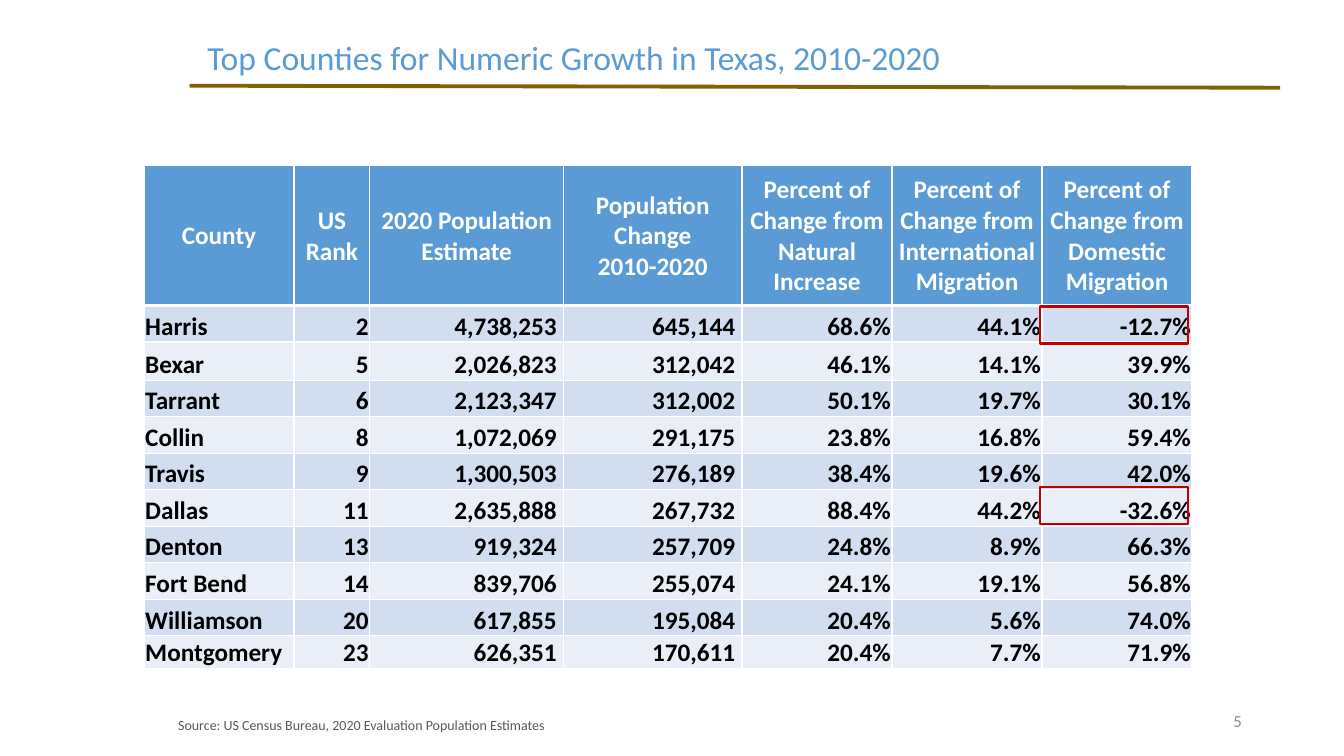
"""Build the slide on Texas counties with the largest numeric growth."""
from lxml import etree
from pptx import Presentation
from pptx.dml.color import RGBColor
from pptx.enum import shapes, text
from pptx.oxml import ns
from pptx.util import Cm, Pt


def rgb(value):
    return RGBColor.from_string(value)


def style(p, size, color, align, bold=False):
    p.alignment = align
    p.font.name = "Calibri"
    p.font.size = Pt(size)
    p.font.bold = bold
    p.font.color.rgb = rgb(color)


LEFT, CENTER, RIGHT = text.PP_ALIGN.LEFT, text.PP_ALIGN.CENTER, text.PP_ALIGN.RIGHT
HEADERS = ["County", "US Rank", "2020 Population Estimate",
           "Population Change\n2010-2020",
           "Percent of Change from Natural Increase",
           "Percent of Change from\nInternational Migration",
           "Percent of Change from Domestic Migration"]
COUNTIES = [
    ("Harris", "2", "4,738,253", "645,144", "68.6%", "44.1%", "-12.7%"),
    ("Bexar", "5", "2,026,823", "312,042", "46.1%", "14.1%", "39.9%"),
    ("Tarrant", "6", "2,123,347", "312,002", "50.1%", "19.7%", "30.1%"),
    ("Collin", "8", "1,072,069", "291,175", "23.8%", "16.8%", "59.4%"),
    ("Travis", "9", "1,300,503", "276,189", "38.4%", "19.6%", "42.0%"),
    ("Dallas", "11", "2,635,888", "267,732", "88.4%", "44.2%", "-32.6%"),
    ("Denton", "13", "919,324", "257,709", "24.8%", "8.9%", "66.3%"),
    ("Fort Bend", "14", "839,706", "255,074", "24.1%", "19.1%", "56.8%"),
    ("Williamson", "20", "617,855", "195,084", "20.4%", "5.6%", "74.0%"),
    ("Montgomery", "23", "626,351", "170,611", "20.4%", "7.7%", "71.9%"),
]
COL_WIDTHS = [3.78, 1.91, 4.88, 4.5, 3.78, 3.78, 3.78]
ROW_HEIGHTS = [3.53, 0.92, 0.96] + [0.92] * 7 + [0.83]

prs = Presentation()
prs.slide_width, prs.slide_height = Cm(33.87), Cm(19.05)
s = prs.slides.add_slide(prs.slide_layouts[5])

rule = s.shapes.add_connector(shapes.MSO_CONNECTOR.STRAIGHT,
                              Cm(4.78), Cm(2.16), Cm(32.26), Cm(2.21))
rule.line.color.rgb = rgb("806000")
rule.line.width = Pt(2.75)
etree.SubElement(rule._element.spPr, ns.qn("a:effectLst"))

title = s.shapes.title
title.left, title.top, title.width, title.height = Cm(4.7), Cm(0.81), Cm(19.51), Cm(1.27)
title.text_frame.text = "Top Counties for Numeric Growth in Texas, 2010-2020"
title.text_frame.vertical_anchor = text.MSO_ANCHOR.TOP
style(title.text_frame.paragraphs[0], 24, "5B9BD5", CENTER)

table = s.shapes.add_table(len(ROW_HEIGHTS), len(COL_WIDTHS), Cm(3.63), Cm(4.17),
                           Cm(sum(COL_WIDTHS)), Cm(sum(ROW_HEIGHTS))).table
for column, width in zip(table.columns, COL_WIDTHS):
    column.width = Cm(width)
for row, height in zip(table.rows, ROW_HEIGHTS):
    row.height = Cm(height)

for i, values in enumerate([HEADERS] + COUNTIES):
    header = i == 0
    for j, value in enumerate(values):
        cell = table.cell(i, j)
        cell.text = value
        cell.vertical_anchor = text.MSO_ANCHOR.MIDDLE if header else text.MSO_ANCHOR.BOTTOM
        cell.margin_left = cell.margin_top = Cm(0.03)
        cell.margin_right = Cm(0.17 if j in (2, 3) and not header else 0.03)
        cell.margin_bottom = 0
        for p in cell.text_frame.paragraphs:
            align = CENTER if header else RIGHT if j else LEFT
            style(p, 18, "FFFFFF" if header else "000000", align, bold=True)
        for side in "LRTB":
            heavy = (i, side) in ((0, "B"), (1, "T"))
            ln = etree.SubElement(cell._tc.get_or_add_tcPr(), ns.qn(f"a:ln{side}"),
                                  w=str(Pt(3 if heavy else 1)))
            fill = etree.SubElement(ln, ns.qn("a:solidFill"))
            etree.SubElement(fill, ns.qn("a:srgbClr"), val="FFFFFF")
        cell.fill.solid()
        cell.fill.fore_color.rgb = rgb("5B9BD5" if header else "D2DEEF" if i % 2 else "EAEFF7")

source = ("Source: US Census Bureau, 2020 Evaluation Population Estimates",
          4.24, 17.93, 12.7, 0.71, 10, "595959", LEFT, text.MSO_ANCHOR.TOP)
page = ("5", 23.93, 17.65, 7.62, 1.02, 12, "8C8C8C", RIGHT, text.MSO_ANCHOR.MIDDLE)
for words, x, y, w, h, size, color, align, anchor in (source, page):
    tf = s.shapes.add_textbox(Cm(x), Cm(y), Cm(w), Cm(h)).text_frame
    tf.word_wrap = True
    tf.vertical_anchor = anchor
    tf.text = words
    style(tf.paragraphs[0], size, color, align)

for top in (7.72, 12.27):
    sp = s.shapes.add_shape(shapes.MSO_SHAPE.RECTANGLE, Cm(26.21), Cm(top), Cm(3.73), Cm(0.94))
    sp.shadow.inherit = False
    sp.fill.background()
    sp.line.color.rgb = rgb("C00000")
    sp.line.width = Pt(1.75)

prs.save("out.pptx")
